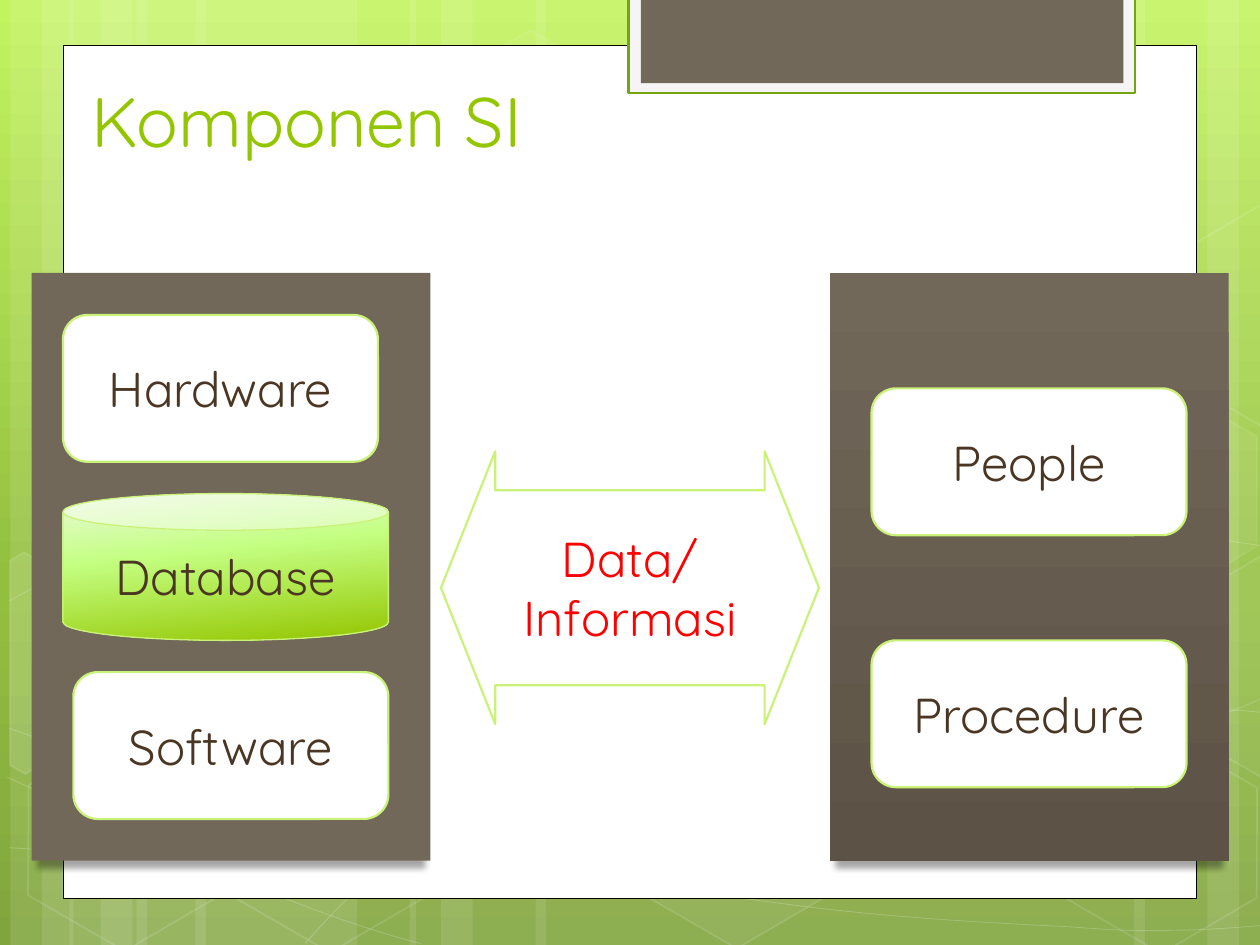
from math import cos, radians, sin

from lxml.etree import SubElement
from pptx import Presentation
from pptx.dml.color import RGBColor
from pptx.enum.shapes import MSO_SHAPE
from pptx.enum.text import MSO_ANCHOR, PP_ALIGN
from pptx.oxml import parse_xml
from pptx.oxml.ns import nsdecls, qn
from pptx.util import Cm, Pt

# All lengths are centimetres.
WIDTH, HEIGHT = 25.4, 19.05
WHITE, BROWN, LIME, GREEN = "FFFFFF", "71685A", "CAF278", "94C600"
FONT = "Quicksand"

BACKGROUND = [(0, "C3F35F"), (62, "93BF3F"), (100, "81A53E")]
PANEL_SHADE = [(0, BROWN), (100, "5C5346")]
CAN_SHADE = [(0, "EAF9DA"), (40, "C4FF82"), (100, GREEN)]

# left, width
STRIPES = [
    (2.75, 4.45), (0.21, 1.27), (0.85, 2.12), (3.94, 4.45), (1.4, 1.27), (2.03, 2.12),
    (18.63, 4.45), (24.34, 1.27), (22.86, 2.12), (10.8, 7.83), (8.26, 1.27), (8.89, 2.12),
]

# Cubic curves: a start point, then two control points and an end point per piece
CURVES = [
    [(0.18, 17.09), (1.55, 17.17), (2.92, 17.25), (4.83, 17.22), (6.73, 17.2), (9.09, 17.15),
     (11.63, 16.89), (14.17, 16.64), (17.78, 16.18), (20.12, 15.67), (22.43, 15.16),
     (24.82, 14.43), (25.58, 14)],
    [(0.18, 12.12), (0.91, 11.71), (1.65, 11.33), (3.07, 10.95), (4.52, 10.57), (6.58, 10.01),
     (8.81, 9.83), (11.07, 9.65), (13.82, 9.63), (16.61, 9.83), (19.41, 10.03),
     (24.05, 10.82), (25.58, 11.02)],
    [(0.15, 15.67), (3.23, 17.07), (6.27, 18.47), (8.48, 19.02)],
    [(0.18, 14.68), (0.97, 14.96), (1.78, 15.24), (3.25, 15.65), (4.72, 16.03), (6.93, 16.66),
     (9.07, 17.09), (11.18, 17.53), (13.84, 17.98), (15.95, 18.24), (18.06, 18.52),
     (20.32, 18.62), (21.67, 18.69), (22.99, 18.8), (23.34, 18.75), (24, 18.75),
     (24.66, 18.72), (25.12, 18.69), (25.58, 18.64)],
    [(6.15, 19.02), (6.6, 18.52), (7.06, 18.01), (7.67, 17.55), (8.28, 17.09), (9.14, 16.59),
     (9.86, 16.23), (10.57, 15.88), (11, 15.72), (11.94, 15.47), (12.85, 15.22),
     (14.55, 14.86), (15.44, 14.68), (16.36, 14.5), (16.48, 14.5), (17.27, 14.45),
     (18.06, 14.38), (19.3, 14.3), (20.17, 14.27), (21.06, 14.25), (22.5, 14.27),
     (22.5, 14.27), (22.5, 14.27), (24.21, 14.27), (24.21, 14.27), (24.66, 14.3),
     (25.1, 14.33), (25.32, 14.35), (25.55, 14.38), (25.48, 14.35), (25.55, 14.38)],
]

# left, top, opacity of fill, opacity of line
HEXAGONS = [
    (8.48, 0.91, 4, 8), (12.62, 14.96, 6, 12), (0.28, 15.01, 0, 12), (0.36, 7.92, 7, 8),
    (4.42, 15.04, 0, 12), (19.13, 11.51, 10, 12), (21.18, 15.06, 0, 12), (21.18, 7.98, 7, 8),
]
HEXAGON_SIZE = (4.45, 3.86)
TILT = 30

LEFT_CUT = [(0.2, 11.3), (0.48, 11.13), (2.44, 12.24), (2.41, 14.48), (0.51, 15.6), (0.2, 15.42)]
RIGHT_CUT = [(23.52, 12.32), (25.43, 11.2), (25.63, 11.33), (25.63, 15.57), (25.45, 15.67),
             (23.52, 14.55)]
RAISE = 7.08
RAISED_CUT = [(x, y - RAISE) for x, y in RIGHT_CUT]
# outline, centre of turning, opacity of fill
CUT_HEXAGONS = [
    (LEFT_CUT, (0.91, 13.59), 10),
    (RIGHT_CUT, (25.02, 13.21), 4),
    (RAISED_CUT, (25.02, 13.21 - RAISE), 0),
]

TITLE = "Komponen SI"
PANEL_TOP, PANEL_SIZE = 5.5, (8.04, 11.85)
PANELS = [(16.73, PANEL_SHADE), (0.64, None)]
BOX_SIZE = (6.35, 2.96)
FIRST_ROW, ROW_STEP = 6.35, 3.6
BOXES = [
    ("Hardware", 1.27, FIRST_ROW),
    ("Software", 1.48, FIRST_ROW + 2 * ROW_STEP),
    ("People", 17.57, 7.83),
    ("Procedure", 17.57, 12.91),
]
DATABASE = ("Database", 1.27, FIRST_ROW + ROW_STEP, 6.56, 2.96)
EXCHANGE = (["Data/", "Informasi"], 8.89, 9.1, 7.62, 5.5)


def rgb(value):
    return RGBColor.from_string(value)


def set_opacity(color_parent, percent):
    color = color_parent.find(".//" + qn("a:srgbClr"))
    SubElement(color, qn("a:alpha"), val=str(percent * 1000))


def shade(owner, stops, angle):
    """Give a shape or a page background a linear gradient, turned clockwise."""
    fill = owner.fill if hasattr(owner, "fill") else owner.background.fill
    fill.solid()
    solid = owner.element.find(".//" + qn("a:solidFill"))
    marks = "".join(f'<a:gs pos="{position * 1000}"><a:srgbClr val="{color}"/></a:gs>'
                    for position, color in stops)
    gradient = parse_xml(f'<a:gradFill {nsdecls("a")} rotWithShape="1"><a:gsLst>{marks}</a:gsLst>'
                         f'<a:lin ang="{angle * 60000}" scaled="0"/></a:gradFill>')
    solid.getparent().replace(solid, gradient)


def style(shape, fill=None, opacity=100, line=None, weight=1, line_opacity=100):
    shape.shadow.inherit = False
    if fill and opacity:
        shape.fill.solid()
        shape.fill.fore_color.rgb = rgb(fill)
        if opacity < 100:
            set_opacity(shape.element.spPr.find(qn("a:solidFill")), opacity)
    else:
        shape.fill.background()
    if line:
        shape.line.color.rgb = rgb(line)
        shape.line.width = Pt(weight)
        if line_opacity < 100:
            set_opacity(shape.element.spPr.find(qn("a:ln")), line_opacity)
    else:
        shape.line.fill.background()
    return shape


def add_preset(page, kind, left, top, width, height, **look):
    shape = page.shapes.add_shape(kind, Cm(left), Cm(top), Cm(width), Cm(height))
    return style(shape, **look)


def add_outline(page, points, close, **look):
    places = [(Cm(x), Cm(y)) for x, y in points]
    builder = page.shapes.build_freeform(*places[0])
    builder.add_line_segments(places[1:], close=close)
    return style(builder.convert_to_shape(), **look)


def bend(shape, knots):
    """Turn each three line segments into one cubic piece, or one line if it is straight."""
    lines = list(shape.element.iter(qn("a:lnTo")))
    for i in range(0, len(lines), 3):
        start, first, second, end = knots[i:i + 4]
        piece = lines[i:i + 3]
        if start == first and second == end:
            for line in piece[:2]:
                line.getparent().remove(line)
            continue
        cubic = parse_xml(f'<a:cubicBezTo {nsdecls("a")}/>')
        piece[0].addprevious(cubic)
        for line in piece:
            cubic.append(line[0])
            line.getparent().remove(line)


def turned_back(points, centre):
    c, s = cos(radians(TILT)), sin(radians(TILT))
    offsets = [(x - centre[0], y - centre[1]) for x, y in points]
    return [(centre[0] + c * x + s * y, centre[1] - s * x + c * y) for x, y in offsets]


def write(shape, lines, color, size=28, align=PP_ALIGN.CENTER, anchor=MSO_ANCHOR.MIDDLE):
    frame = shape.text_frame
    for name, value in {"word_wrap": True, "vertical_anchor": anchor}.items():
        setattr(frame, name, value)
    for i, line in enumerate(lines):
        para = frame.add_paragraph() if i else frame.paragraphs[0]
        para.alignment = align
        span = para.add_run()
        span.text = line
        for name, value in {"name": FONT, "size": Pt(size)}.items():
            setattr(span.font, name, value)
        span.font.color.rgb = rgb(color)


def drop_shadow(shape):
    effects = shape.element.spPr.find(qn("a:effectLst"))
    effects.append(parse_xml(
        f'<a:outerShdw {nsdecls("a")} blurRad="{Pt(3.5)}" dist="{Pt(4)}" dir="5400000" sx="97000" '
        'algn="t" rotWithShape="0"><a:srgbClr val="000000"><a:alpha val="34000"/></a:srgbClr>'
        '</a:outerShdw>'))


def draw_backdrop(page):
    shade(page, BACKGROUND, 90)
    for left, width in STRIPES:
        add_preset(page, MSO_SHAPE.RECTANGLE, left, 0, width, HEIGHT, fill=WHITE, opacity=10)
    for knots in CURVES:
        bend(add_outline(page, knots, False, line=WHITE, weight=0.5, line_opacity=20), knots)
    for left, top, opacity, line_opacity in HEXAGONS:
        hexagon = add_preset(page, MSO_SHAPE.HEXAGON, left, top, *HEXAGON_SIZE, fill=WHITE,
                             opacity=opacity, line=WHITE, line_opacity=line_opacity)
        hexagon.adjustments[0] = 0.285
        hexagon.rotation = TILT
    for points, centre, opacity in CUT_HEXAGONS:
        cut = add_outline(page, turned_back(points, centre), True, fill=WHITE, opacity=opacity,
                          line=WHITE, line_opacity=12)
        cut.rotation = TILT
    for place, look in [
        ((1.27, 0.91, 22.86, 17.2), {"fill": WHITE, "line": "000000", "weight": 0.5}),
        ((12.67, -0.05, 10.21, 1.93), {"fill": "F5F5F5", "line": "74A510", "weight": 1.25}),
        ((12.92, -0.05, 9.73, 1.73), {"fill": BROWN}),
    ]:
        add_preset(page, MSO_SHAPE.RECTANGLE, *place, **look)


def draw_components(page):
    title = page.shapes.add_textbox(Cm(1.59), Cm(1.4), Cm(20.32), Cm(1.98))
    write(title, [TITLE], GREEN, 40, PP_ALIGN.LEFT, MSO_ANCHOR.BOTTOM)
    for left, stops in PANELS:
        panel = add_preset(page, MSO_SHAPE.RECTANGLE, left, PANEL_TOP, *PANEL_SIZE, fill=BROWN)
        drop_shadow(panel)
        if stops:
            shade(panel, stops, 90)
    card = {"fill": WHITE, "line": LIME, "weight": 1.25}
    for label, left, top in BOXES:
        box = add_preset(page, MSO_SHAPE.ROUNDED_RECTANGLE, left, top, *BOX_SIZE, **card)
        write(box, [label], "4A3622")
    label, *place = DATABASE
    can = add_preset(page, MSO_SHAPE.CAN, *place, line=LIME, weight=0.75)
    shade(can, CAN_SHADE, 84)
    write(can, [label], "4A3622")
    lines, *place = EXCHANGE
    arrow = add_preset(page, MSO_SHAPE.LEFT_RIGHT_ARROW, *place, **card)
    arrow.adjustments[0], arrow.adjustments[1] = 0.715, 0.199
    write(arrow, lines, "FF0000")


def main():
    deck = Presentation()
    deck.slide_width, deck.slide_height = Cm(WIDTH), Cm(HEIGHT)
    page = deck.slides.add_slide(deck.slide_layouts[6])
    draw_backdrop(page)
    draw_components(page)
    deck.save("out.pptx")


if __name__ == "__main__":
    main()
